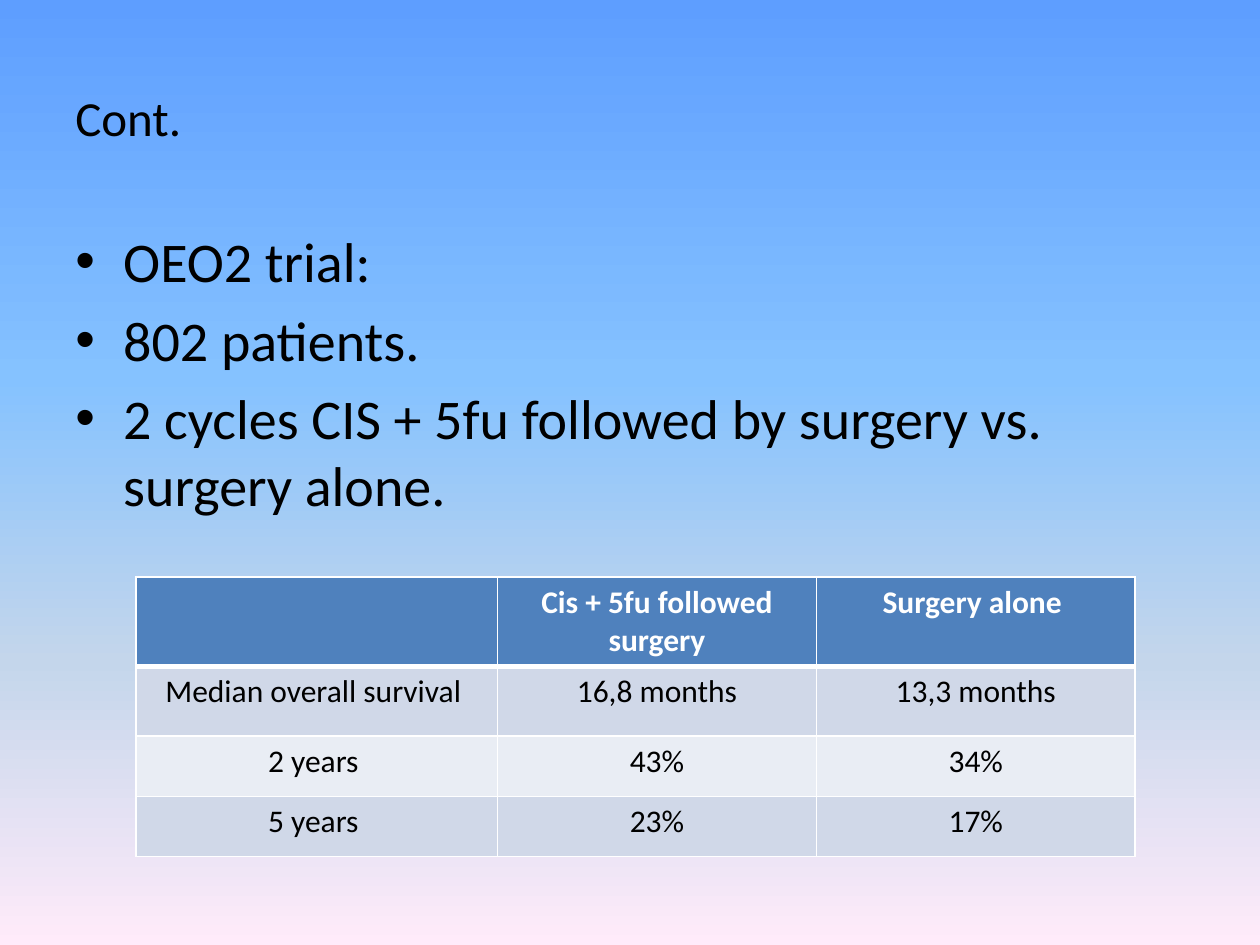
import lxml.etree
import pptx
import pptx.dml.color
import pptx.enum.text
import pptx.oxml.ns
import pptx.util

Inches = pptx.util.Inches
Pt = pptx.util.Pt
qn = pptx.oxml.ns.qn

FONT = "Calibri"
COLORS = {
    "text": "000000",
    "white": "FFFFFF",
    "header": "4F81BD",
    "band_dark": "D0D8E8",
    "band_light": "E9EDF4",
}
SKY = [(0, "5E9EFF"), (40, "85C2FF"), (70, "C4D6EB"), (100, "FFEBFA")]
BULLETS = [
    "OEO2 trial:",
    "802 patients.",
    "2 cycles CIS + 5fu followed by surgery vs. surgery alone.",
]
SURVIVAL = [
    ["", "Cis + 5fu followed surgery", "Surgery alone "],
    ["Median overall survival ", "16,8 months", "13,3 months"],
    ["2 years ", "43%", "34%"],
    ["5 years ", "23%", "17%"],
]
COL_WIDTHS = [2.87, 2.53, 2.53]
ROW_HEIGHTS = [0.71, 0.55, 0.48, 0.48]


def rgb(name):
    return pptx.dml.color.RGBColor.from_string(COLORS[name])


def add_child(parent, tag, **attrs):
    return lxml.etree.SubElement(parent, qn(tag), **attrs)


def style(p, size, color="text", bold=False):
    p.font.name = FONT
    p.font.size = Pt(size)
    p.font.bold = bold
    p.font.color.rgb = rgb(color)


def paint_background(s):
    fill = s.background.fill
    fill.gradient()
    fill.gradient_angle = 270
    stops = s._element.find(".//" + qn("a:gsLst"))
    for gs in list(stops):
        stops.remove(gs)
    for pos, color in SKY:
        gs = add_child(stops, "a:gs", pos=str(pos * 1000))
        add_child(gs, "a:srgbClr", val=color)


def add_text_frame(s, box):
    tf = s.shapes.add_textbox(*map(Inches, box)).text_frame
    tf.word_wrap = True
    return tf


def add_title(s, box):
    tf = add_text_frame(s, box)
    tf.vertical_anchor = pptx.enum.text.MSO_ANCHOR.MIDDLE
    p = tf.paragraphs[0]
    p.text = "Cont."
    style(p, 28)


def add_bullets(s, box):
    tf = add_text_frame(s, box)
    for i, text in enumerate(BULLETS):
        p = tf.add_paragraph() if i else tf.paragraphs[0]
        p.text = text
        p.space_before = Pt(6.4)
        pPr = p._p.get_or_add_pPr()
        pPr.set("marL", str(Inches(0.38)))
        pPr.set("indent", str(-Inches(0.38)))
        add_child(pPr, "a:buFont", typeface="Arial")
        add_child(pPr, "a:buChar", char="•")
        style(p, 32)


def set_borders(cell, widths):
    tcPr = cell._tc.get_or_add_tcPr()
    for side, width in zip("LRTB", widths):
        ln = add_child(tcPr, "a:ln" + side, w=str(Pt(width)))
        add_child(add_child(ln, "a:solidFill"), "a:srgbClr", val=COLORS["white"])


def add_survival_table(s, box):
    shape = s.shapes.add_table(len(SURVIVAL), len(COL_WIDTHS), *map(Inches, box))
    table = shape.table
    for col, width in zip(table.columns, COL_WIDTHS):
        col.width = Inches(width)
    for row, height in zip(table.rows, ROW_HEIGHTS):
        row.height = Inches(height)
    for r, texts in enumerate(SURVIVAL):
        header = r == 0
        fill = "header" if header else ("band_light", "band_dark")[r % 2]
        top, bottom = (3 if r == 1 else 1), (3 if header else 1)
        for c, text in enumerate(texts):
            cell = table.cell(r, c)
            set_borders(cell, (1, 1, top, bottom))
            cell.fill.solid()
            cell.fill.fore_color.rgb = rgb(fill)
            p = cell.text_frame.paragraphs[0]
            p.text = text
            p.alignment = pptx.enum.text.PP_ALIGN.CENTER
            style(p, 18, "white" if header else "text", header)


def main():
    prs = pptx.Presentation()
    prs.slide_width, prs.slide_height = Inches(10), Inches(7.5)
    s = prs.slides.add_slide(prs.slide_layouts[6])
    paint_background(s)
    add_title(s, (0.5, 0.3, 9, 1.25))
    add_bullets(s, (0.5, 1.75, 9.17, 4.95))
    add_survival_table(s, (1.08, 4.58, sum(COL_WIDTHS), sum(ROW_HEIGHTS)))
    prs.save("out.pptx")


if __name__ == "__main__":
    main()
